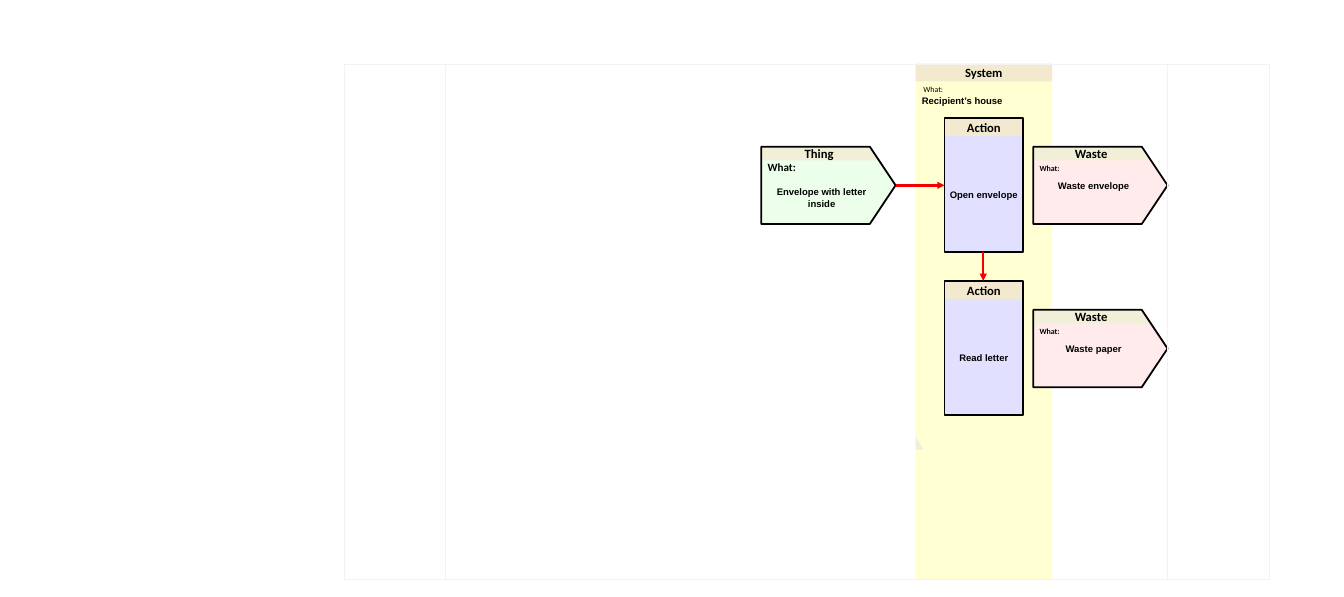
"""Draws the flow of a letter through the recipient's house."""
from lxml.etree import SubElement
from pptx import Presentation
from pptx.dml.color import RGBColor as RGB
from pptx.enum.shapes import MSO_CONNECTOR as LINK, MSO_SHAPE as SHAPE
from pptx.enum.text import MSO_ANCHOR as ANCHOR, PP_ALIGN as ALIGN
from pptx.oxml.ns import qn
from pptx.util import Pt

PX = 9144
HUE = {
    "band": "FFFFD2", "head": "F2E9CE", "tab": "F1EFD7", "act": "E1E1FF",
    "thing": "EBFFEB", "waste": "FFEBEB", "ink": "000000", "flow": "F50000",
    "frame": "F2F2F2",
}
HEAD = {"name": "Calibri", "size": Pt(16), "bold": True}
BODY = {"name": "Arial", "size": Pt(12), "bold": True}
NOTE = {"name": "Calibri", "size": Pt(10), "bold": False}
MARK = {**NOTE, "bold": True}

deck = Presentation()
deck.slide_width, deck.slide_height = 2362 * PX, 1050 * PX
slide = deck.slides.add_slide(deck.slide_layouts[6])
shapes = slide.shapes


def draw(kind, x, y, w, h, fill=None, line=None, width=2.25, bend=()):
    shape = shapes.add_shape(kind, x * PX, y * PX, w * PX, h * PX)
    shape.shadow.inherit = False
    for i, value in enumerate(bend):
        shape.adjustments[i] = value
    if fill:
        shape.fill.solid()
        shape.fill.fore_color.rgb = RGB.from_string(HUE[fill])
    else:
        shape.fill.background()
    if line:
        shape.line.color.rgb = RGB.from_string(HUE[line])
        shape.line.width = Pt(width)
    else:
        shape.line.fill.background()
    return shape


def write(words, look, x, y, w, h, pad=0, mid=True):
    box = shapes.add_textbox(x * PX, y * PX, w * PX, h * PX)
    frame = box.text_frame
    form = {
        "word_wrap": True, "margin_left": pad * PX, "margin_right": pad * PX,
        "margin_top": 0, "margin_bottom": 0,
        "vertical_anchor": ANCHOR.MIDDLE if mid else ANCHOR.TOP,
    }
    for key, value in form.items():
        setattr(frame, key, value)
    para = frame.paragraphs[0]
    para.alignment = ALIGN.CENTER if mid else ALIGN.LEFT
    run = para.add_run()
    run.text = words
    for key, value in look.items():
        setattr(run.font, key, value)
    run.font.color.rgb = RGB.from_string(HUE["ink"])


draw(SHAPE.RECTANGLE, 1609, 112, 240, 906, "band")
draw(SHAPE.RECTANGLE, 1609, 112, 240, 31, "head")
write("System", HEAD, 1609, 112, 240, 31)
write("What:", NOTE, 1623, 149, 217, 17, mid=False)
write("Recipient’s house", BODY, 1620, 167, 248, 20, mid=False)
draw(SHAPE.RIGHT_TRIANGLE, 1609, 767, 14, 24, "tab")

for words, y in [("Open envelope", 207), ("Read letter", 494)]:
    draw(SHAPE.RECTANGLE, 1660, y, 138, 236, "act")
    draw(SHAPE.RECTANGLE, 1660, y + 1, 138, 31, "head")
    write("Action", HEAD, 1660, y + 1, 138, 31)
    draw(SHAPE.RECTANGLE, 1660, y, 138, 236, line="ink")
    write(words, BODY, 1660, y + 33, 138, 204, pad=8)

big = {**MARK, "size": Pt(14)}
cards = [
    ("Thing", "Envelope with letter inside", "thing", 1338, 258, big, 25, 44, 92),
    ("Waste", "Waste envelope", "waste", 1816, 258, MARK, 29, 42, 54),
    ("Waste", "Waste paper", "waste", 1816, 545, MARK, 29, 42, 54),
]
for head, words, fill, x, y, mark, gap, drop, high in cards:
    draw(SHAPE.RIGHT_ARROW, x + 1, y, 235, 136, fill, bend=(1, 0.327))
    draw(SHAPE.RIGHT_TRIANGLE, x + 190, y, 14, 24, "tab")
    draw(SHAPE.RECTANGLE, x, y, 190, 24, "tab")
    write(head, HEAD, x + 6, y - 2, 191, 27)
    draw(SHAPE.RIGHT_ARROW, x, y, 236, 136, line="ink", bend=(1, 0.333))
    write("What:", mark, x + 11, y + gap, 70, 24, mid=False)
    write(words, BODY, x, y + drop, 212, high, pad=8)

for ends in [(1728, 444, 1728, 494), (1574, 326, 1660, 326)]:
    link = shapes.add_connector(LINK.STRAIGHT, *[end * PX for end in ends])
    link.line.color.rgb = RGB.from_string(HUE["flow"])
    link.line.width = Pt(3)
    SubElement(link.line._get_or_add_ln(), qn("a:tailEnd"), type="triangle")
    SubElement(link._element.spPr, qn("a:effectLst"))

for x in (604, 782):
    draw(SHAPE.RECTANGLE, x, 112, 1448, 906, line="frame", width=0.25)

deck.save("out.pptx")
